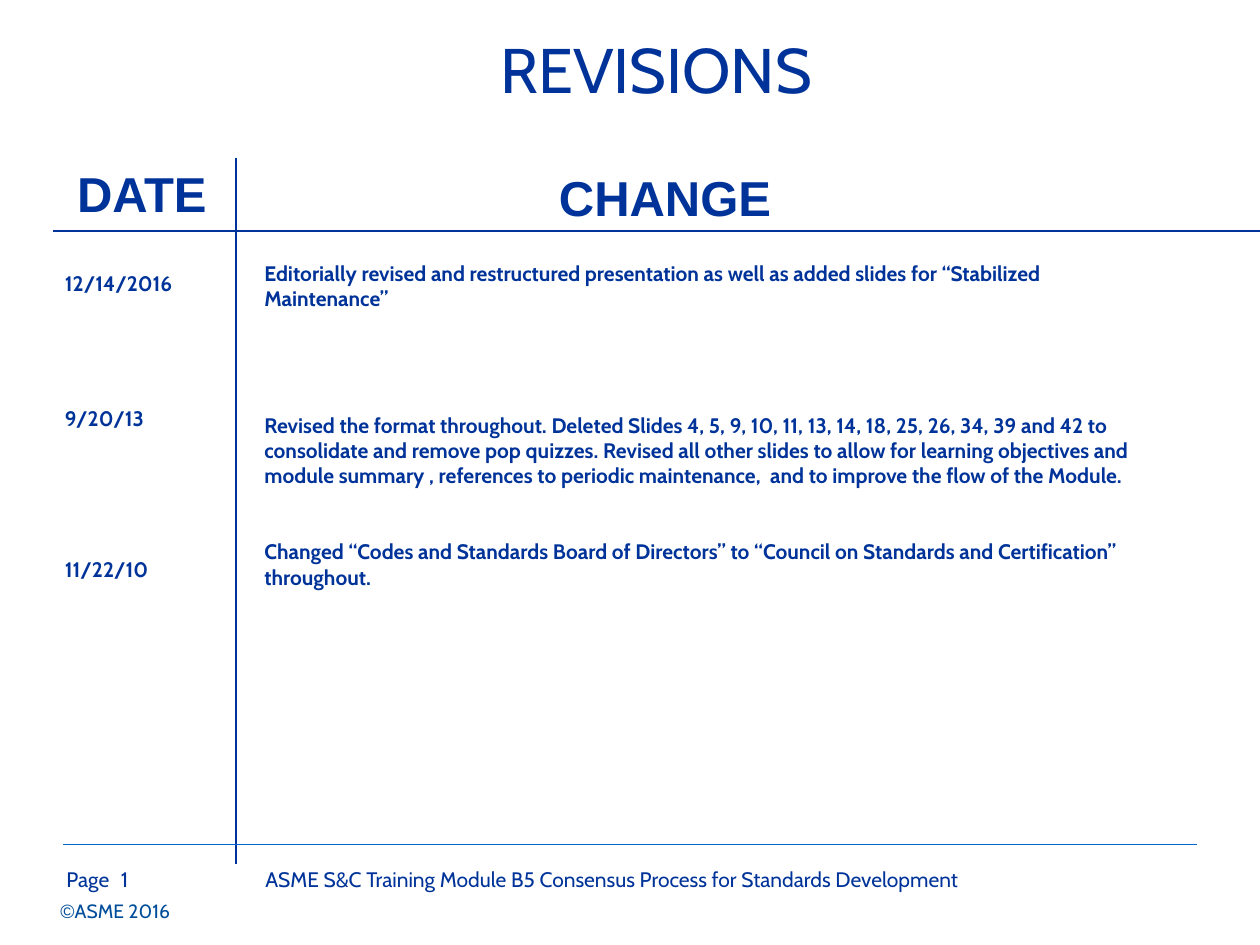
from lxml.etree import SubElement as Sub
from pptx import Presentation as Deck
from pptx.dml.color import RGBColor as Rgb
from pptx.enum.shapes import MSO_CONNECTOR as Conn
from pptx.enum.text import MSO_ANCHOR as Anchor, PP_ALIGN as Align
from pptx.oxml.ns import qn
from pptx.util import Cm, Pt

INK = {"navy": "003399", "blue": "0066CC", "steel": "004D9A"}

# Each entry: text, points of space above it
DATES = [("12/14/2016", 0), ("9/20/13", 62.5), ("11/22/10", 72)]
NOTES = [
    ("Editorially revised and restructured presentation as well as added "
     "slides for “Stabilized Maintenance”", 0),
    ("Revised the format throughout. Deleted Slides 4, 5, 9, 10, 11, 13, 14, "
     "18, 25, 26, 34, 39 and 42 to consolidate and remove pop quizzes. "
     "Revised all other slides to allow for learning objectives and module "
     "summary , references to periodic maintenance,  and to improve the flow "
     "of the Module.", 58),
    ("Changed “Codes and Standards Board of Directors” to “Council on "
     "Standards and Certification” throughout.", 29),
]


def write(par, text, size=12, face="Cabin", ink="navy", bold=False,
          align=Align.LEFT, above=0):
    par.alignment = align
    if above:
        par.space_before = Pt(above)
    run = par.add_run()
    run.text = text
    font = run.font
    font.size, font.name, font.bold = Pt(size), face, bold
    font.color.rgb = Rgb.from_string(INK[ink])


def place(shape, box):
    shape.left, shape.top, shape.width, shape.height = map(Cm, box)


def add_text(slide, box, items, wrap=True, **form):
    frame = slide.shapes.add_textbox(*map(Cm, box)).text_frame
    frame.word_wrap = wrap
    for i, (text, above) in enumerate(items):
        par = frame.add_paragraph() if i else frame.paragraphs[0]
        write(par, text, above=above, **form)
    return frame


def add_line(slide, start, end, ink="navy", width=1):
    line = slide.shapes.add_connector(Conn.STRAIGHT, *map(Cm, start + end))
    line.line.color.rgb = Rgb.from_string(INK[ink])
    line.line.width = Pt(width)
    Sub(line._element.spPr, qn("a:effectLst"))


def add_title(slide, text, box):
    title = slide.shapes.title
    place(title, box)
    frame = title.text_frame
    frame.word_wrap = True
    frame.vertical_anchor = Anchor.MIDDLE
    write(frame.paragraphs[0], text, size=36, align=Align.CENTER)


def add_foot(slide):
    add_line(slide, (1.27, 17.02), (24.13, 17.02), ink="blue", width=0.75)
    top, high = 17.35, 1.32
    add_text(slide, (1.09, top, 1.8, high), [("Page", 0)])
    add_text(slide, (2.19, top, 1.19, high), [("1", 0)])
    add_text(slide, (3.87, top, 16.94, high),
             [("ASME S&C Training Module B5 Consensus Process for Standards "
               "Development", 0)], align=Align.CENTER)
    form = dict(size=11, ink="steel")
    mark = add_text(slide, (0.97, 18.01, 2.72, 0.74), [("©", 0)],
                    wrap=False, face="Arial", **form)
    write(mark.paragraphs[0], "ASME 2016", **form)


def main():
    deck = Deck()
    deck.slide_width, deck.slide_height = Cm(25.4), Cm(19.05)
    slide = deck.slides.add_slide(deck.slide_layouts[5])

    add_title(slide, "REVISIONS", (2.12, 0.32, 22.22, 2.11))

    # Column heads
    head = dict(size=28, face="Arial", bold=True, align=Align.CENTER)
    add_text(slide, (1.06, 3.17, 3.6, 1.5), [("DATE", 0)], **head)
    add_text(slide, (5.15, 3.25, 16.51, 1.5), [("CHANGE", 0)], **head)

    # Rules between heads and columns
    add_line(slide, (4.76, 3.18), (4.76, 17.42))
    add_line(slide, (1.06, 4.65), (25.4, 4.65))

    # Revision log
    add_text(slide, (1.06, 5.33, 3.68, 11), DATES, bold=True)
    add_text(slide, (5.08, 5.13, 18.42, 8.13), NOTES, bold=True)

    add_foot(slide)
    deck.save("out.pptx")


if __name__ == "__main__":
    main()
